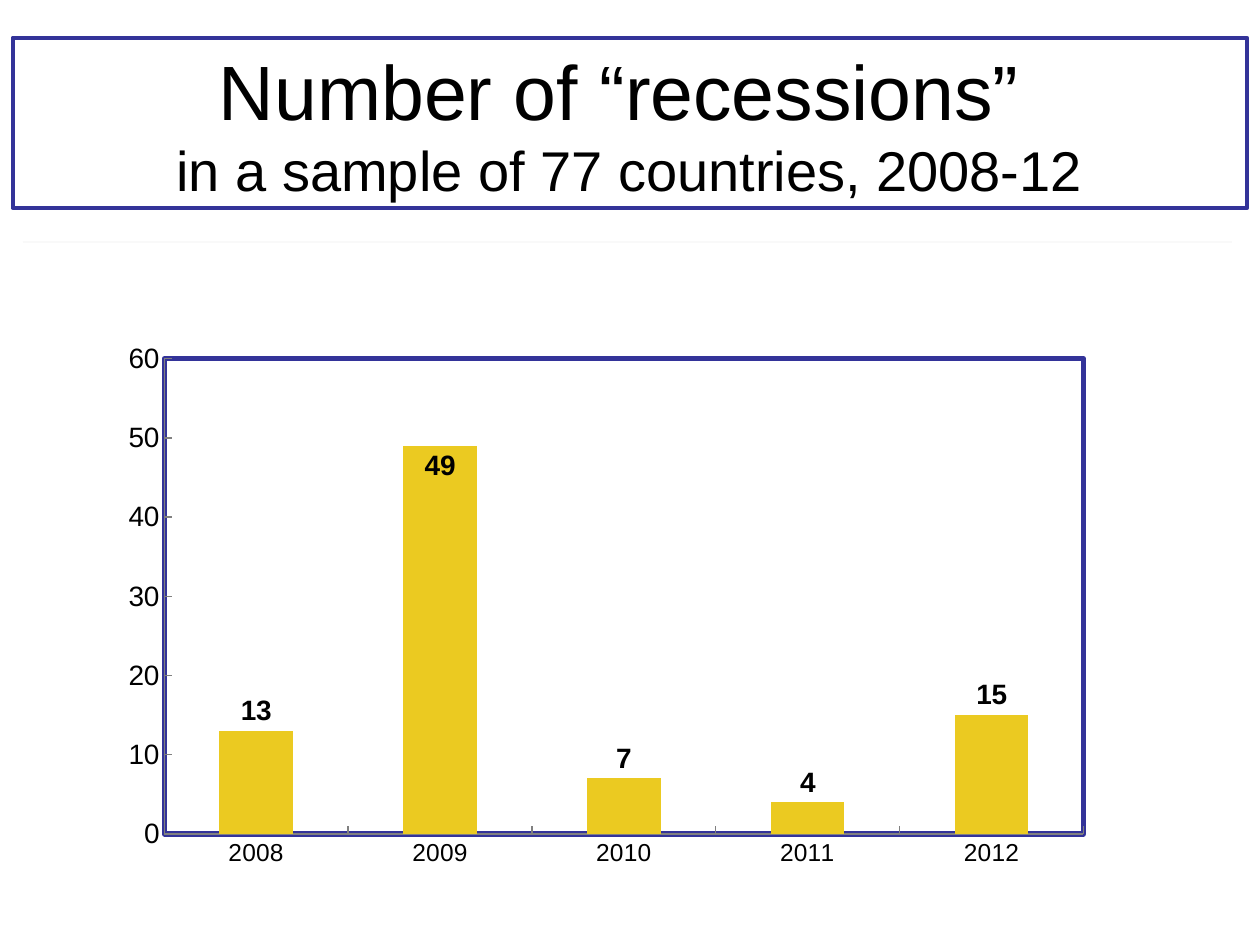
from dataclasses import dataclass
from lxml import etree
from pptx import Presentation
from pptx import util as u
from pptx.chart import data as cd
from pptx.dml import color as co
from pptx.enum import chart as ch, shapes as sh, text as tx
from pptx.oxml import ns


@dataclass(frozen=True)
class Theme:
    font: str = "Arial"
    ink: str = "000000"
    paper: str = "FFFFFF"
    frame: str = "333399"
    rule: str = "F9F9F9"
    axis: str = "808080"
    bar: str = "EBCA21"
    head: int = 44
    sub: int = 32
    value: int = 16
    year: int = 14


LOOK = Theme()
WIDE, HIGH = u.Inches(10), u.Inches(7.5)
COUNTS = {"2008": 13, "2009": 49, "2010": 7, "2011": 4, "2012": 15}
INSIDE = "2009"


def box(x, y, w, h):
    return int(x * WIDE), int(y * HIGH), int(w * WIDE), int(h * HIGH)


def apply(item, style):
    for key, value in style.items():
        setattr(item, key, value)


def ink(font, size, bold=False):
    apply(font, {"name": LOOK.font, "size": u.Pt(size), "bold": bold})
    font.color.rgb = co.RGBColor.from_string(LOOK.ink)


def stroke(line, tone, width):
    line.color.rgb = co.RGBColor.from_string(tone)
    line.width = u.Pt(width)


def add_title(slide, area):
    shape = slide.shapes.add_textbox(*area)
    stroke(shape.line, LOOK.frame, 2.25)
    frame = shape.text_frame
    apply(frame, {"word_wrap": True, "vertical_anchor": tx.MSO_ANCHOR.MIDDLE})
    para = frame.paragraphs[0]
    para.alignment = tx.PP_ALIGN.CENTER
    head = para.add_run()
    head.text = "Number of “recessions” "
    ink(head.font, LOOK.head)
    para.add_line_break()
    sub = para.add_run()
    sub.text = "in a sample of 77 countries, 2008-12"
    ink(sub.font, LOOK.sub)


def add_rule(slide, area):
    x, y, w, h = area
    line = slide.shapes.add_connector(sh.MSO_CONNECTOR.STRAIGHT, x, y, x + w, y + h)
    stroke(line.line, LOOK.rule, 1.5)
    etree.SubElement(line._element.spPr, ns.qn("a:effectLst"))


def set_plot(chart, x, y, w, h):
    area = chart._chartSpace.chart.plotArea
    for old in area.findall(ns.qn("c:layout")):
        area.remove(old)
    layout = etree.Element(ns.qn("c:layout"))
    area.insert(0, layout)
    manual = etree.SubElement(layout, ns.qn("c:manualLayout"))
    parts = {"layoutTarget": "inner", "xMode": "edge", "yMode": "edge",
             "x": x, "y": y, "w": w, "h": h}
    for name, value in parts.items():
        etree.SubElement(manual, ns.qn(f"c:{name}")).set("val", str(value))
    props = etree.SubElement(area, ns.qn("c:spPr"))
    line = etree.Element(ns.qn("a:ln"), w=str(u.Pt(3)))
    for owner, tone in ((props, LOOK.paper), (line, LOOK.frame)):
        fill = etree.SubElement(owner, ns.qn("a:solidFill"))
        etree.SubElement(fill, ns.qn("a:srgbClr")).set("val", tone)
    props.append(line)


def add_bars(slide, area):
    data = cd.CategoryChartData(number_format="0")
    data.categories = list(COUNTS)
    data.add_series("Series 1", list(COUNTS.values()))
    kind = ch.XL_CHART_TYPE.COLUMN_CLUSTERED
    chart = slide.shapes.add_chart(kind, *area, data).chart
    apply(chart, {"has_legend": False, "has_title": False})
    ink(chart.font, LOOK.year)
    set_plot(chart, 0.038, 0.14, 0.912, 0.786)

    for axis, size in ((chart.category_axis, LOOK.year), (chart.value_axis, LOOK.value)):
        apply(axis, {"has_major_gridlines": False,
                     "major_tick_mark": ch.XL_TICK_MARK.INSIDE,
                     "minor_tick_mark": ch.XL_TICK_MARK.NONE})
        ink(axis.tick_labels.font, size)
        stroke(axis.format.line, LOOK.axis, 0.75)
    apply(chart.value_axis, {"minimum_scale": 0, "maximum_scale": 60, "major_unit": 10})

    plot = chart.plots[0]
    apply(plot, {"gap_width": 150, "vary_by_categories": False})
    bars = plot.series[0]
    bars.format.fill.solid()
    bars.format.fill.fore_color.rgb = co.RGBColor.from_string(LOOK.bar)
    labels = bars.data_labels
    spot = ch.XL_LABEL_POSITION
    apply(labels, {"show_value": True, "position": spot.OUTSIDE_END})
    ink(labels.font, LOOK.value, True)
    label = bars.points[list(COUNTS).index(INSIDE)].data_label
    ink(label.font, LOOK.value, True)
    label.position = spot.INSIDE_END


def main():
    deck = Presentation()
    apply(deck, {"slide_width": WIDE, "slide_height": HIGH})
    slide = deck.slides.add_slide(deck.slide_layouts[6])
    add_title(slide, box(0.01, 0.04, 0.98, 0.18))
    add_rule(slide, box(0.018, 0.256, 0.96, 0))
    add_bars(slide, box(0.1, 0.29, 0.8, 0.64))
    deck.save("out.pptx")


if __name__ == "__main__":
    main()
